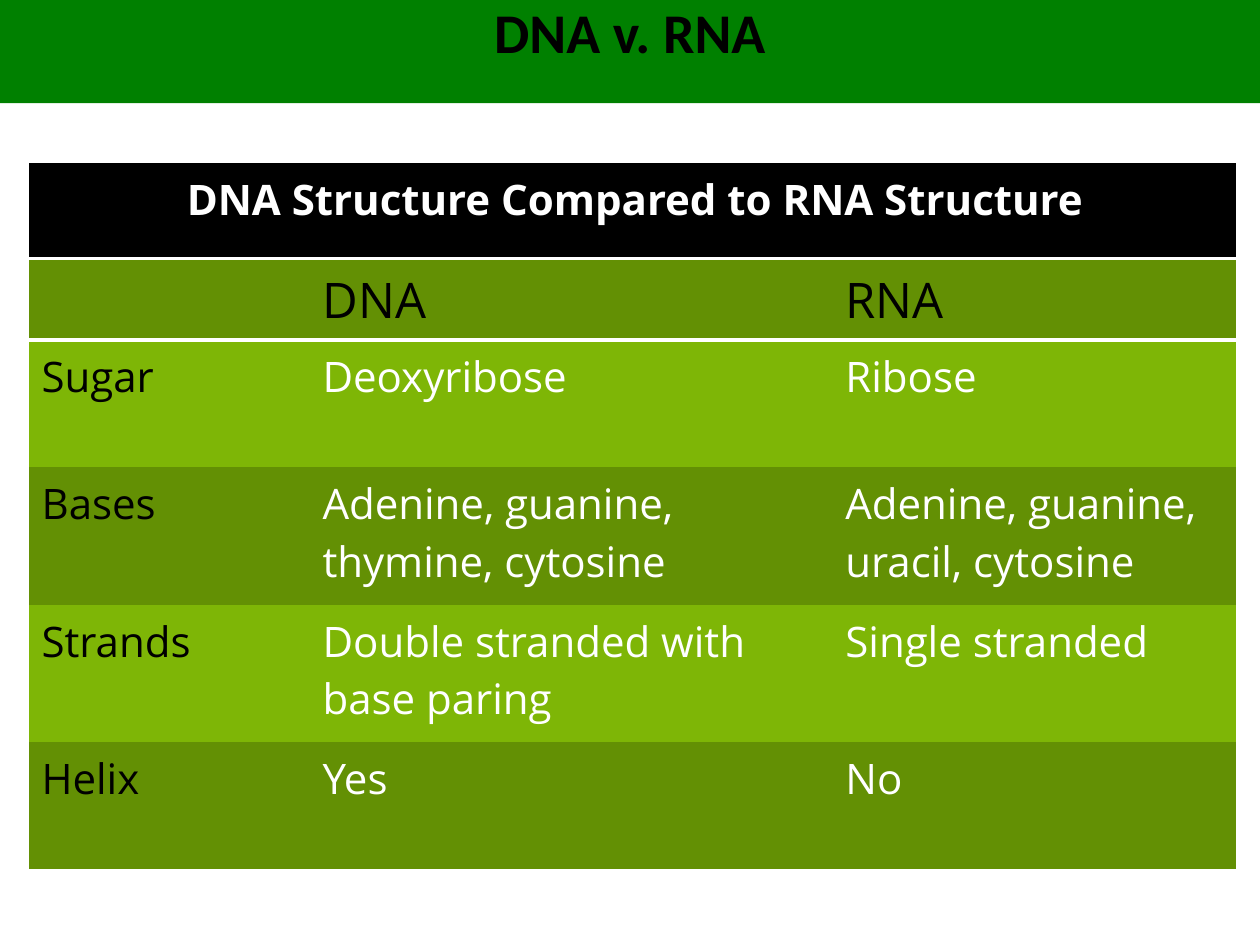
from lxml import etree
from pptx import Presentation
from pptx.dml.color import RGBColor
from pptx.enum import shapes, text
from pptx.oxml import ns
from pptx.util import Inches, Pt

BLACK, WHITE = "000000", "FFFFFF"
BANDS = ["639004", "7EB606"]
COLUMNS = [2.23, 4.15, 3.2]
HEIGHTS = [0.76, 0.58, 1.01, 1.09, 1.09, 1.01]
ROWS = [
    ["DNA Structure Compared to RNA Structure", "", ""],
    ["", "DNA", "RNA"],
    ["Sugar", "Deoxyribose", "Ribose"],
    ["Bases", "Adenine, guanine, thymine, cytosine", "Adenine, guanine, uracil, cytosine"],
    ["Strands", "Double stranded with base paring", "Single stranded"],
    ["Helix", "Yes", "No"],
]
NO_STYLE = "{2D5ABB26-0587-4C30-8999-92F81FD0307C}"


def rgb(value):
    """Return the colour for a hex string."""
    return RGBColor.from_string(value)


def write(tf, words, font, size, color, bold=False, align=text.PP_ALIGN.LEFT):
    """Put one formatted, slightly indented paragraph in a text frame."""
    p = tf.paragraphs[0]
    p.text = words
    p.alignment = align
    p.font.name, p.font.size, p.font.bold = font, Pt(size), bold
    p.font.color.rgb = rgb(color)
    p._p.get_or_add_pPr().set("marL", str(Inches(0.04)))


def add_border(cell, side, color, width):
    """Draw a solid line on one side of a table cell."""
    tc_pr = cell._tc.get_or_add_tcPr()
    ln = etree.Element(ns.qn("a:ln" + side), w=str(Pt(width)))
    fill = etree.SubElement(ln, ns.qn("a:solidFill"))
    etree.SubElement(fill, ns.qn("a:srgbClr"), val=color)
    tc_pr.insert(0, ln)


def add_title(slide, left, top, width, height):
    """Add the green band with the slide title at its top."""
    group = slide.shapes.add_group_shape()
    sp = group.shapes.add_shape(shapes.MSO_SHAPE.RECTANGLE, left, top, width, height)
    sp.shadow.inherit = False
    sp.fill.solid()
    sp.fill.fore_color.rgb = rgb("008000")
    sp.line.fill.background()
    tf = group.shapes.add_textbox(left, top, width, Inches(0.53)).text_frame
    tf.word_wrap = True
    tf.margin_left = tf.margin_top = tf.margin_bottom = 0
    tf.margin_right = Inches(0.04)
    write(tf, "DNA v. RNA", "Calibri", 32, BLACK, True, text.PP_ALIGN.CENTER)


def fill_cell(cell, words, row, column):
    """Format one cell by its place in the table."""
    header, labels = row == 0, row == 1
    cell.fill.solid()
    cell.fill.fore_color.rgb = rgb(BLACK if header else BANDS[(row - 1) % 2])
    if header or labels:
        add_border(cell, "B" if header else "T", WHITE, 2)
    cell.margin_left = cell.margin_right = Inches(0.06)
    cell.margin_top = cell.margin_bottom = Inches(0.06)
    if words:
        cell.vertical_anchor = text.MSO_ANCHOR.MIDDLE if labels else text.MSO_ANCHOR.TOP
        dark = labels or (column == 0 and not header)
        align = text.PP_ALIGN.CENTER if header else text.PP_ALIGN.LEFT
        write(cell.text_frame, words, "Open Sans", 28 if labels else 24,
              BLACK if dark else WHITE, header, align)


def add_comparison(slide, left, top, width, height):
    """Add the table that compares DNA with RNA."""
    table = slide.shapes.add_table(len(ROWS), len(COLUMNS), left, top, width, height).table
    table.first_row = table.horz_banding = False
    table._tbl.tblPr.find(ns.qn("a:tableStyleId")).text = NO_STYLE
    for column, share in zip(table.columns, COLUMNS):
        column.width = int(width * share / sum(COLUMNS))
    for row, share in zip(table.rows, HEIGHTS):
        row.height = int(height * share / sum(HEIGHTS))
    table.cell(0, 0).merge(table.cell(0, len(COLUMNS) - 1))
    for i, row in enumerate(ROWS):
        for j, words in enumerate(row):
            fill_cell(table.cell(i, j), words, i, j)


def main():
    """Build and save the slide."""
    prs = Presentation()
    prs.slide_width, prs.slide_height = Inches(10), Inches(7.5)
    slide = prs.slides.add_slide(prs.slide_layouts[6])
    add_comparison(slide, Inches(0.23), Inches(1.29), Inches(9.58), Inches(5.54))
    add_title(slide, 0, Inches(-0.02), Inches(10), Inches(0.84))
    prs.save("out.pptx")


if __name__ == "__main__":
    main()
